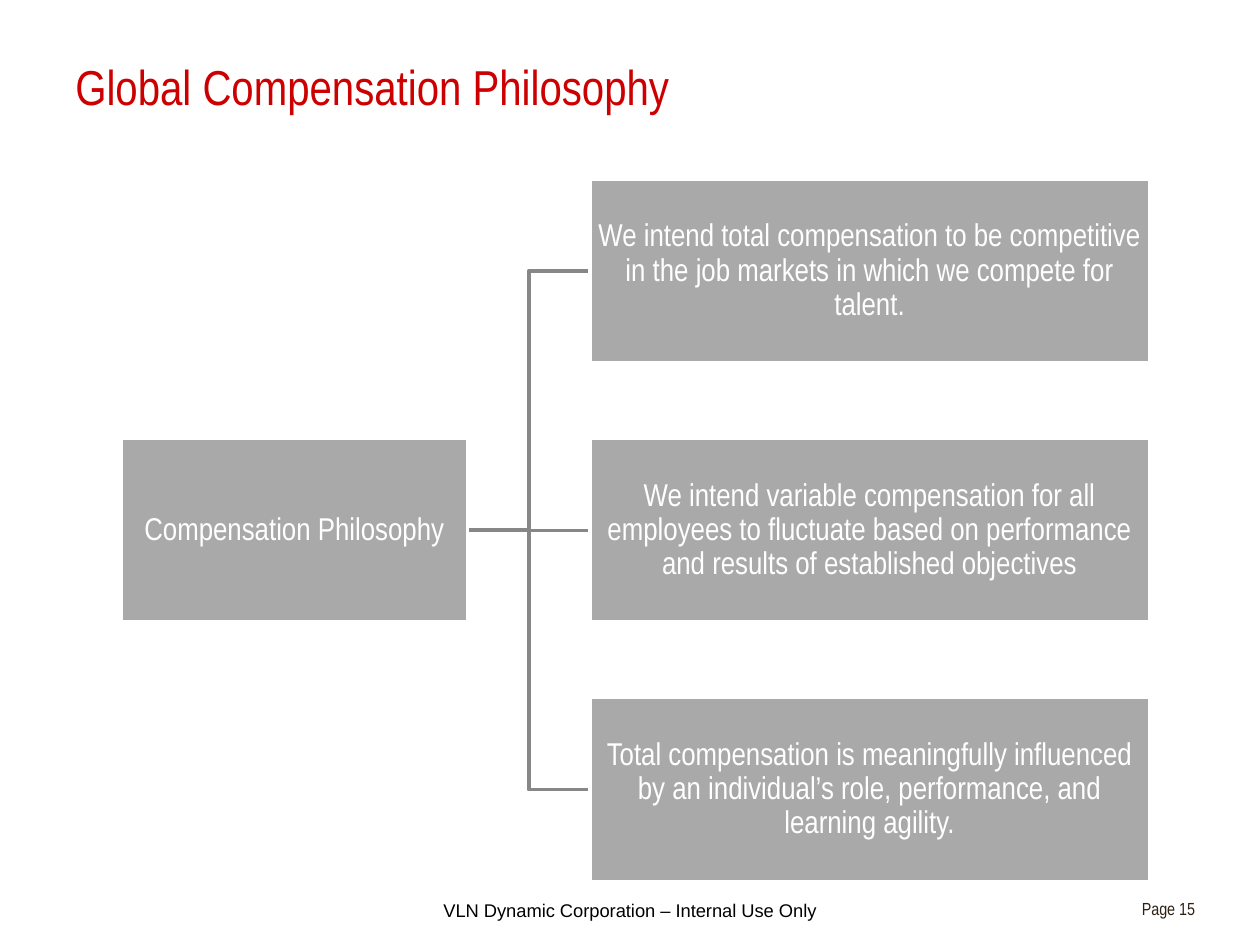
from dataclasses import dataclass

from lxml.etree import SubElement
from pptx import Presentation
from pptx.dml.color import RGBColor
from pptx.enum.shapes import MSO_CONNECTOR, MSO_SHAPE
from pptx.enum.text import MSO_ANCHOR, PP_ALIGN
from pptx.oxml.ns import qn
from pptx.slide import Slide
from pptx.text.text import TextFrame
from pptx.util import Cm, Pt

NARROW = "Arial Narrow"
BOX_HEIGHT = 3.71
MIDDLE = 10.69
ROW_PITCH = 5.23
ROOT_LEFT, ROOT_WIDTH = 2.44, 6.99
BRANCH_LEFT, BRANCH_WIDTH = 11.89, 11.28
PRINCIPLES = (
    "We intend total compensation to be competitive in the job markets in which we compete for talent.",
    "We intend variable compensation for all employees to fluctuate based on performance "
    "and results of established objectives",
    "Total compensation is meaningfully influenced by an individual’s role, performance, and learning agility.",
)


@dataclass(frozen=True)
class Box:
    text: str
    left: float
    width: float
    center: float


@dataclass(frozen=True)
class Label:
    text: str
    left: float
    top: float
    width: float
    height: float
    size: float
    color: str
    font: str = NARROW
    align: PP_ALIGN = PP_ALIGN.LEFT
    anchor: MSO_ANCHOR = MSO_ANCHOR.TOP
    spacing: float = 1.0
    wrap: bool = True


LABELS = (
    Label("VLN Dynamic Corporation – Internal Use Only", 8.69, 18.01, 8.2, 0.71, 10.5, "000000",
          font="Arial", wrap=False),
    Label("Global Compensation Philosophy", 1.27, 0.43, 17.98, 2.74, 28, "CC0000",
          anchor=MSO_ANCHOR.MIDDLE, spacing=0.9),
    Label("Page 15", 18.42, 17.98, 5.92, 0.69, 10, "2D2015", align=PP_ALIGN.RIGHT),
)


def rgb(value: str) -> RGBColor:
    return RGBColor.from_string(value)


def write_text(frame: TextFrame, text: str, size: float, color: str, font: str,
               align: PP_ALIGN, anchor: MSO_ANCHOR, spacing: float) -> None:
    frame.vertical_anchor = anchor
    paragraph = frame.paragraphs[0]
    paragraph.text = text
    paragraph.alignment = align
    paragraph.line_spacing = spacing
    paragraph.font.name = font
    paragraph.font.size = Pt(size)
    paragraph.font.color.rgb = rgb(color)


def draw_label(slide: Slide, label: Label) -> None:
    shape = slide.shapes.add_textbox(Cm(label.left), Cm(label.top), Cm(label.width), Cm(label.height))
    shape.text_frame.word_wrap = label.wrap
    write_text(shape.text_frame, label.text, label.size, label.color, label.font,
               label.align, label.anchor, label.spacing)


def draw_box(slide: Slide, box: Box) -> None:
    shape = slide.shapes.add_shape(MSO_SHAPE.RECTANGLE, Cm(box.left), Cm(box.center - BOX_HEIGHT / 2),
                                   Cm(box.width), Cm(BOX_HEIGHT))
    shape.shadow.inherit = False
    shape.fill.solid()
    shape.fill.fore_color.rgb = rgb("A9A9A9")
    shape.line.color.rgb = rgb("FFFFFF")
    shape.line.width = Pt(2)
    frame = shape.text_frame
    frame.word_wrap = True
    frame.margin_left = frame.margin_right = frame.margin_top = frame.margin_bottom = Cm(0.03)
    write_text(frame, box.text, 18, "FFFFFF", NARROW, PP_ALIGN.CENTER, MSO_ANCHOR.MIDDLE, 0.9)


def draw_link(slide: Slide, root: Box, branch: Box) -> None:
    start, end = Cm(root.left + root.width), Cm(branch.left)
    bend = (start + end) // 2
    start_y, end_y = Cm(root.center), Cm(branch.center)
    if start_y == end_y:
        link = slide.shapes.add_connector(MSO_CONNECTOR.STRAIGHT, start, start_y, end, end_y)
        SubElement(link._element.spPr, qn("a:effectLst"))
    else:
        builder = slide.shapes.build_freeform(start, start_y)
        builder.add_line_segments([(bend, start_y), (bend, end_y), (end, end_y)], close=False)
        link = builder.convert_to_shape()
        link.shadow.inherit = False
        link.fill.background()
    link.line.color.rgb = rgb("878787")
    link.line.width = Pt(2)


def main() -> None:
    """Build the compensation philosophy slide and save it."""
    presentation = Presentation()
    presentation.slide_width, presentation.slide_height = Cm(25.4), Cm(19.05)
    slide = presentation.slides.add_slide(presentation.slide_layouts[6])
    root = Box("Compensation Philosophy", ROOT_LEFT, ROOT_WIDTH, MIDDLE)
    branches = [Box(text, BRANCH_LEFT, BRANCH_WIDTH, MIDDLE + (row - 1) * ROW_PITCH)
                for row, text in enumerate(PRINCIPLES)]
    for label in LABELS:
        draw_label(slide, label)
    for branch in reversed(branches):
        draw_link(slide, root, branch)
    for box in (root, *branches):
        draw_box(slide, box)
    presentation.save("out.pptx")


if __name__ == "__main__":
    main()
